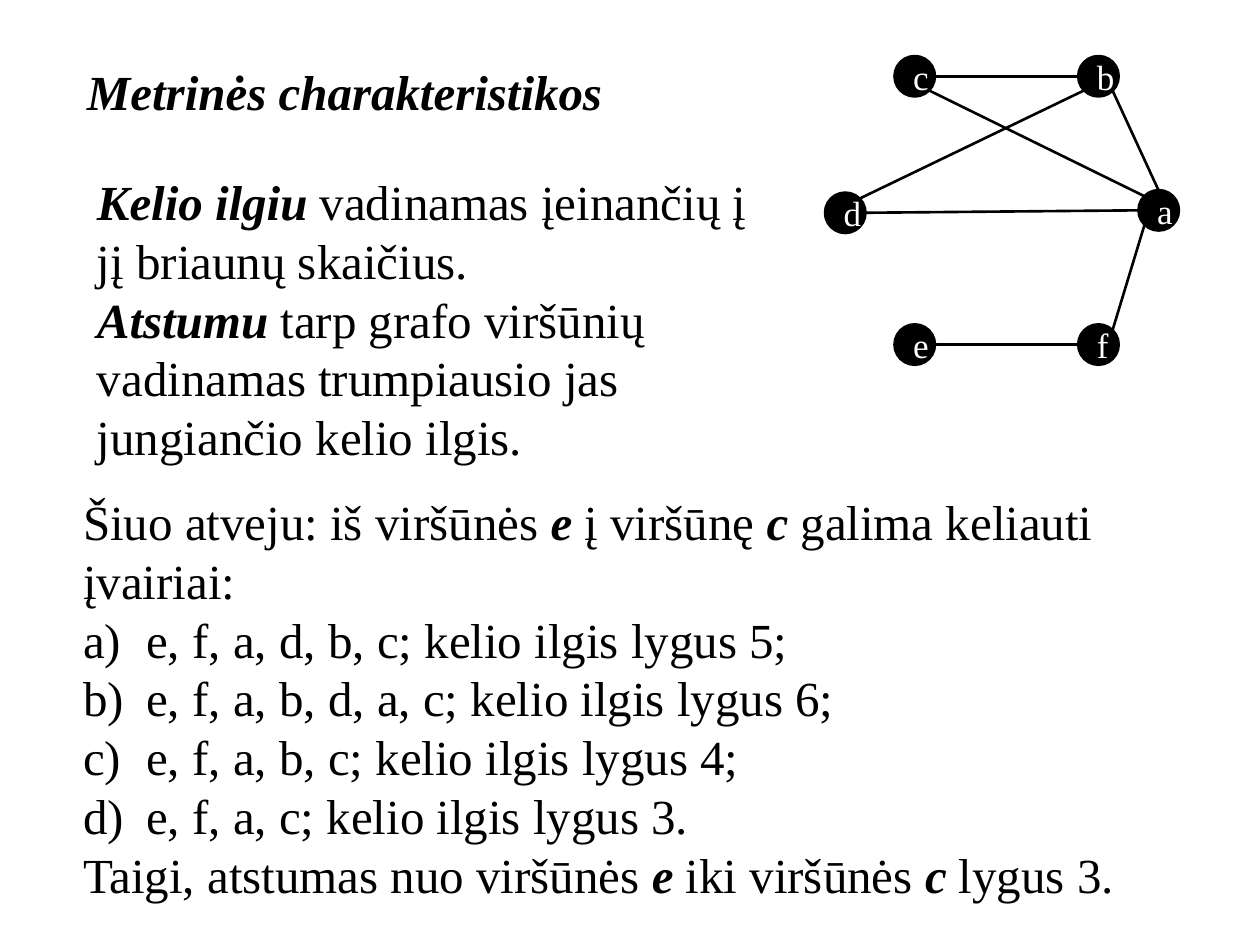
from math import cos, sin, radians
from pptx import Presentation
from pptx.dml.color import RGBColor as RGB
from pptx.enum.shapes import MSO_CONNECTOR as LINK, MSO_SHAPE as SHAPE
from pptx.enum.text import MSO_ANCHOR as ANCHOR, MSO_AUTO_SIZE as FIT, PP_ALIGN as ALIGN
from pptx.oxml.xmlchemy import OxmlElement as Node
from pptx.util import Pt

theme = {"font": "Times New Roman", "ink": RGB(0, 0, 0), "paper": RGB(255, 255, 255),
         "text": Pt(28), "label": Pt(20)}


def add_run(para, text, size, color, strong=False):
    run = para.add_run()
    run.text = text
    font = run.font
    font.name, font.size, font.color.rgb = theme["font"], size, color
    font.bold = font.italic = strong


def fill_box(box, place, paras):
    """Each paragraph is (lettered, runs); odd runs are bold italic."""
    box.left, box.top, box.width, box.height = map(Pt, place)
    frame = box.text_frame
    frame.word_wrap, frame.auto_size = True, FIT.NONE
    frame.vertical_anchor = ANCHOR.TOP
    for i, (letter, runs) in enumerate(paras):
        para = frame.paragraphs[0] if i == 0 else frame.add_paragraph()
        para.alignment = ALIGN.LEFT
        para.space_before = para.space_after = Pt(0)
        props = para._p.get_or_add_pPr()
        props.set("marL", str(Pt(36) if letter else 0))
        props.set("indent", str(Pt(-36) if letter else 0))
        bullet = Node("a:buAutoNum" if letter else "a:buNone")
        if letter:
            bullet.set("type", "alphaLcParenR")
        props.append(bullet)
        for j, text in enumerate(runs):
            add_run(para, text, theme["text"], theme["ink"], j % 2 == 1)


deck = Presentation()
deck.slide_width, deck.slide_height = Pt(720), Pt(540)
slide = deck.slides.add_slide(deck.slide_layouts[3])
title, terms, case = list(slide.placeholders)[:3]

# Title and texts
fill_box(title, (42.5, 31.7, 658, 41), [(False, ["", "Metrinės charakteristikos"])])
fill_box(terms, (48.2, 94.3, 387.4, 177), [
    (False, ["", "Kelio ilgiu ", "vadinamas įeinančių į jį briaunų skaičius."]),
    (False, ["", "Atstumu ", "tarp grafo viršūnių vadinamas trumpiausio jas jungiančio kelio ilgis."]),
])
walks = [("e, f, a, d, b, c", 5), ("e, f, a, b, d, a, c", 6), ("e, f, a, b, c", 4), ("e, f, a, c", 3)]
ends = [";", ";", ";", "."]
fill_box(case, (40.3, 277.2, 671, 244.8), [
    (False, ["Šiuo atveju: iš viršūnės ", "e ", "į viršūnę ", "c ", "galima keliauti įvairiai:"]),
    *[(True, [f"{walk}; kelio ilgis lygus {size}{end}"]) for (walk, size), end in zip(walks, ends)],
    (False, ["Taigi, atstumas nuo viršūnės ", "e ", "iki viršūnės ", "c ", "lygus 3."]),
])

# Graph: vertex centres
graph = slide.shapes.add_group_shape().shapes
radius = 11.3
spots = {"c": (522.7, 43.6), "b": (627.7, 43.6), "d": (483, 121.6),
         "a": (662.1, 120.2), "e": (522.7, 196.9), "f": (627.7, 196.9)}

# Edges: each end names a vertex and the clockwise angle where the line meets it
edges = [("c", 0, "b", 180), ("d", 0, "a", 180), ("f", -45, "a", 135), ("d", -45, "b", 135),
         ("b", 45, "a", -90), ("e", 0, "f", 180), ("c", 45, "a", -135)]
for start, out, stop, into in edges:
    ports = []
    for name, turn in ((start, out), (stop, into)):
        x, y = spots[name]
        ports += [Pt(x + radius * cos(radians(turn))), Pt(y + radius * sin(radians(turn)))]
    edge = graph.add_connector(LINK.STRAIGHT, *ports)
    edge.line.color.rgb, edge.line.width = theme["ink"], Pt(1.5)
    edge._element.spPr.append(Node("a:effectLst"))

# Vertices
for name, (x, y) in spots.items():
    dot = graph.add_shape(SHAPE.OVAL, Pt(x - radius), Pt(y - radius), Pt(2 * radius), Pt(2 * radius))
    dot.shadow.inherit = False
    dot.fill.solid()
    dot.fill.fore_color.rgb = dot.line.color.rgb = theme["ink"]
    dot.line.width = Pt(2)
    dot.text_frame.vertical_anchor = ANCHOR.MIDDLE
    para = dot.text_frame.paragraphs[0]
    para.alignment = ALIGN.CENTER
    add_run(para, name, theme["label"], theme["paper"])

deck.save("out.pptx")
